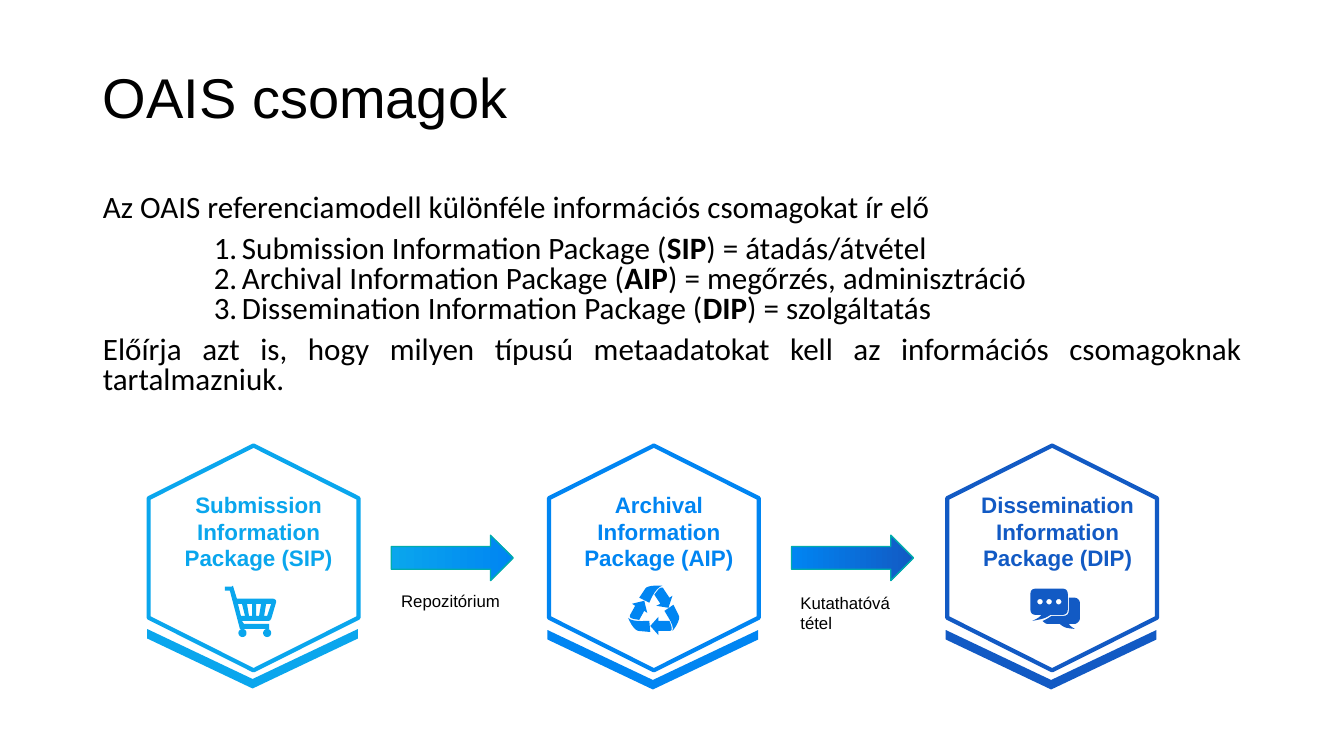
import math
import pptx
import pptx.util
import pptx.dml.color
import pptx.enum.shapes
import pptx.enum.text
import pptx.oxml.ns
import lxml.etree

Inches, Pt = pptx.util.Inches, pptx.util.Pt
SHAPE = pptx.enum.shapes.MSO_SHAPE
ALIGN = pptx.enum.text.PP_ALIGN
ANCHOR = pptx.enum.text.MSO_ANCHOR
AUTO_SIZE = pptx.enum.text.MSO_AUTO_SIZE

BLACK = "000000"
ARROW_EDGE = "01ACAC"
TITLE = "OAIS csomagok"
BODY = [
    ("plain", ["Az OAIS referenciamodell különféle információs csomagokat ír elő"], 0),
    ("numbered", ["Submission Information Package (", "SIP", ") = átadás/átvétel"], 8),
    ("numbered", ["Archival Information Package (", "AIP", ") = megőrzés, adminisztráció"], 0),
    ("numbered", ["Dissemination Information Package (", "DIP", ") = szolgáltatás"], 0),
    ("plain", ["Előírja azt is, hogy milyen típusú metaadatokat kell az "
               "információs csomagoknak tartalmazniuk."], 8),
]

# Icon outlines in hundredths of an inch: 2 numbers = corner, 3 = circle, 6 = curve.
CART = [
    [(41, 18), (39, 30), (42, 30), (46, 18)],
    [(31, 18), (31, 30), (34, 30), (36, 18)],
    [(22, 18), (24, 30), (27, 30), (27, 18)],
    [(13, 18), (16, 30), (20, 30), (17, 18)],
    [(8, 0), (12, 13), (48, 13), (49, 13, 51, 14, 51, 16), (46, 33),
     (45, 34, 45, 35, 43, 35), (17, 35), (19, 38), (44, 38), (44, 43),
     (15, 43), (5, 5), (0, 5), (0, 1), (7, 1)],
    [(17.5, 47, 4)],
    [(42, 47, 4)],
]
RECYCLE = [
    [(0, 32), (4, 36, 14, 35, 21, 35), (22, 46), (11, 45), (7, 45, 3, 39, 0, 32)],
    [(30, 31), (30, 35), (41, 35), (43, 40, 45, 45, 41, 45), (30, 45), (30, 49), (22, 40)],
    [(45, 19), (50, 29), (52, 32, 49, 39, 44, 45), (46, 40, 40, 32, 36, 25)],
    [(16, 15), (19, 27), (16, 25), (11, 34), (6, 33, 0, 33, 2, 29), (7, 20), (4, 18)],
    [(33, 2), (34, 2, 35, 2, 35, 3), (41, 12), (44, 10), (40, 22), (28, 20),
     (32, 18), (26, 9), (29, 5, 31, 2, 33, 2)],
    [(28, 0), (30, 0, 32, 0, 34, 0), (28, 2, 24, 10, 21, 17), (11, 12), (17, 3),
     (18, 1, 23, 0, 28, 0)],
]
CHAT = [
    [(9.5, 13, 2.7)],
    [(18.5, 13, 2.7)],
    [(28, 13, 2.7)],
    [(38, 9), (44, 9), (46, 9, 49, 11, 49, 14), (49, 30), (49, 32, 46, 35, 44, 35),
     (38, 35), (39, 36, 39, 37, 44, 40), (35, 39, 34, 39, 29, 35), (17, 35),
     (15, 35, 13, 33, 12, 32), (15, 31, 18, 29, 21, 27), (33, 27),
     (36, 27, 38, 25, 38, 22)],
    [(5, 0), (32, 0), (35, 0, 37, 2, 37, 5), (37, 21), (37, 24, 35, 26, 32, 26),
     (20, 26), (14, 30, 12, 30, 2, 32), (8, 29, 8, 29, 11, 26), (5, 26),
     (2, 26, 0, 24, 0, 21), (0, 5), (0, 2, 2, 0, 5, 0)],
]
PACKAGES = [
    {"name": "Submission Information Package (SIP)", "color": "0AA6ED", "left": 1.4,
     "label": (1.66, 1.81), "fold_top": 5.49, "icon": CART, "icon_at": (2.23, 5.81)},
    {"name": "Archival Information Package (AIP)", "color": "0085F2", "left": 5.37,
     "label": (5.63, 1.81), "fold_top": 5.5, "icon": RECYCLE, "icon_at": (6.23, 5.81)},
    {"name": "Dissemination Information Package (DIP)", "color": "125AC4", "left": 9.32,
     "label": (9.51, 1.96), "fold_top": 5.5, "icon": CHAT, "icon_at": (10.22, 5.84)},
]
STEPS = [
    ("Repozitórium", 3.88, (3.88, 5.81, 1.23, 0.3)),
    ("Kutathatóvá tétel", 7.85, (7.84, 5.83, 1.23, 0.5)),
]


def rgb(value):
    return pptx.dml.color.RGBColor.from_string(value)


def style(paragraph, size, face, color, bold=False):
    font = paragraph.font
    font.size, font.name, font.bold = Pt(size), face, bold
    font.color.rgb = rgb(color)


def place(shape, left, top, width, height):
    shape.left, shape.top = Inches(left), Inches(top)
    shape.width, shape.height = Inches(width), Inches(height)


def add_preset(kind, box, adjustments, rotation=0):
    shape = slide.shapes.add_shape(kind, *map(Inches, box))
    shape.shadow.inherit = False
    shape.rotation = rotation
    for index, value in enumerate(adjustments):
        shape.adjustments[index] = value
    return shape


def add_caption(text, box, size, color, bold=False, align=ALIGN.LEFT):
    frame = slide.shapes.add_textbox(*map(Inches, box)).text_frame
    frame.word_wrap = True
    frame.auto_size = AUTO_SIZE.SHAPE_TO_FIT_TEXT
    paragraph = frame.paragraphs[0]
    paragraph.text = text
    paragraph.alignment = align
    style(paragraph, size, "Arial", color, bold)


def flatten(contour):
    points = []
    for part in contour:
        if len(part) == 2:
            points.append(part)
        elif len(part) == 3:
            x, y, radius = part
            angles = [math.tau * step / 24 for step in range(24)]
            points += [(x + radius * math.cos(a), y + radius * math.sin(a)) for a in angles]
        else:
            knots = [points[-1], part[:2], part[2:4], part[4:]]
            for step in range(1, 7):
                t = step / 6
                weights = [math.comb(3, k) * t ** k * (1 - t) ** (3 - k) for k in range(4)]
                points.append(tuple(sum(w * knot[axis] for w, knot in zip(weights, knots))
                                    for axis in (0, 1)))
    return points


def add_icon(contours, left, top, color):
    outlines = [[(Inches(left + x / 100), Inches(top + y / 100)) for x, y in flatten(contour)]
                for contour in contours]
    builder = slide.shapes.build_freeform(*outlines[0][0])
    for index, outline in enumerate(outlines):
        if index:
            builder.move_to(*outline[0])
        builder.add_line_segments(outline[1:], close=True)
    icon = builder.convert_to_shape()
    icon.shadow.inherit = False
    icon.fill.solid()
    icon.fill.fore_color.rgb = rgb(color)
    icon.line.fill.background()


def set_bullet(paragraph, numbered):
    properties = paragraph._p.get_or_add_pPr()
    properties.set("marL", str(Inches(1.38 if numbered else 0)))
    properties.set("indent", str(Inches(-0.28 if numbered else 0)))
    tag = "a:buAutoNum" if numbered else "a:buNone"
    bullet = lxml.etree.SubElement(properties, pptx.oxml.ns.qn(tag))
    if numbered:
        bullet.set("type", "arabicPeriod")


deck = pptx.Presentation()
deck.slide_width, deck.slide_height = Inches(13.33), Inches(7.5)
slide = deck.slides.add_slide(deck.slide_layouts[1])

title = slide.shapes.title
place(title, 0.92, 0.4, 11.5, 1.2)
title.text_frame.text = TITLE
title.text_frame.vertical_anchor = ANCHOR.MIDDLE
title.text_frame.auto_size = AUTO_SIZE.NONE
heading = title.text_frame.paragraphs[0]
heading.alignment, heading.line_spacing = ALIGN.LEFT, 0.9
style(heading, 40, "Arial", BLACK)

body = slide.placeholders[1]
place(body, 0.92, 1.88, 11.5, 2.2)
body.text_frame.auto_size = AUTO_SIZE.NONE
for index, (kind, pieces, space_before) in enumerate(BODY):
    paragraph = body.text_frame.add_paragraph() if index else body.text_frame.paragraphs[0]
    set_bullet(paragraph, kind == "numbered")
    paragraph.alignment, paragraph.line_spacing = ALIGN.JUSTIFY, 0.8
    paragraph.space_before, paragraph.space_after = Pt(space_before), Pt(0)
    style(paragraph, 22.2, "Calibri", BLACK)
    for position, piece in enumerate(pieces):
        run = paragraph.add_run()
        run.text = piece
        if position == 1:
            run.font.bold = True

for package in PACKAGES:
    color, left = package["color"], package["left"]
    hexagon = add_preset(SHAPE.HEXAGON, (left, 4.49, 2.23, 2.09), (0.25, 1.15), 270)
    hexagon.fill.background()
    hexagon.line.color.rgb = rgb(color)
    hexagon.line.width = Pt(3)
    fold = add_preset(SHAPE.CHEVRON, (left + 0.81, package["fold_top"], 0.59, 2.09), (0.84,), 90)
    fold.fill.solid()
    fold.fill.fore_color.rgb = rgb(color)
    fold.line.fill.background()
    label_left, label_width = package["label"]
    add_caption(package["name"], (label_left, 4.82, label_width, 0.91), 16, color, True, ALIGN.CENTER)
    add_icon(package["icon"], *package["icon_at"], color)

for (caption, left, caption_box), source, target in zip(STEPS, PACKAGES, PACKAGES[1:]):
    arrow = add_preset(SHAPE.RIGHT_ARROW, (left, 5.31, 1.21, 0.45), (0.5, 0.5))
    arrow.fill.gradient()
    arrow.fill.gradient_angle = 0
    for stop, package in zip(arrow.fill.gradient_stops, (source, target)):
        stop.color.rgb = rgb(package["color"])
    arrow.line.color.rgb = rgb(ARROW_EDGE)
    arrow.line.width = Pt(1)
    add_caption(caption, caption_box, 12, BLACK)

deck.save("out.pptx")
